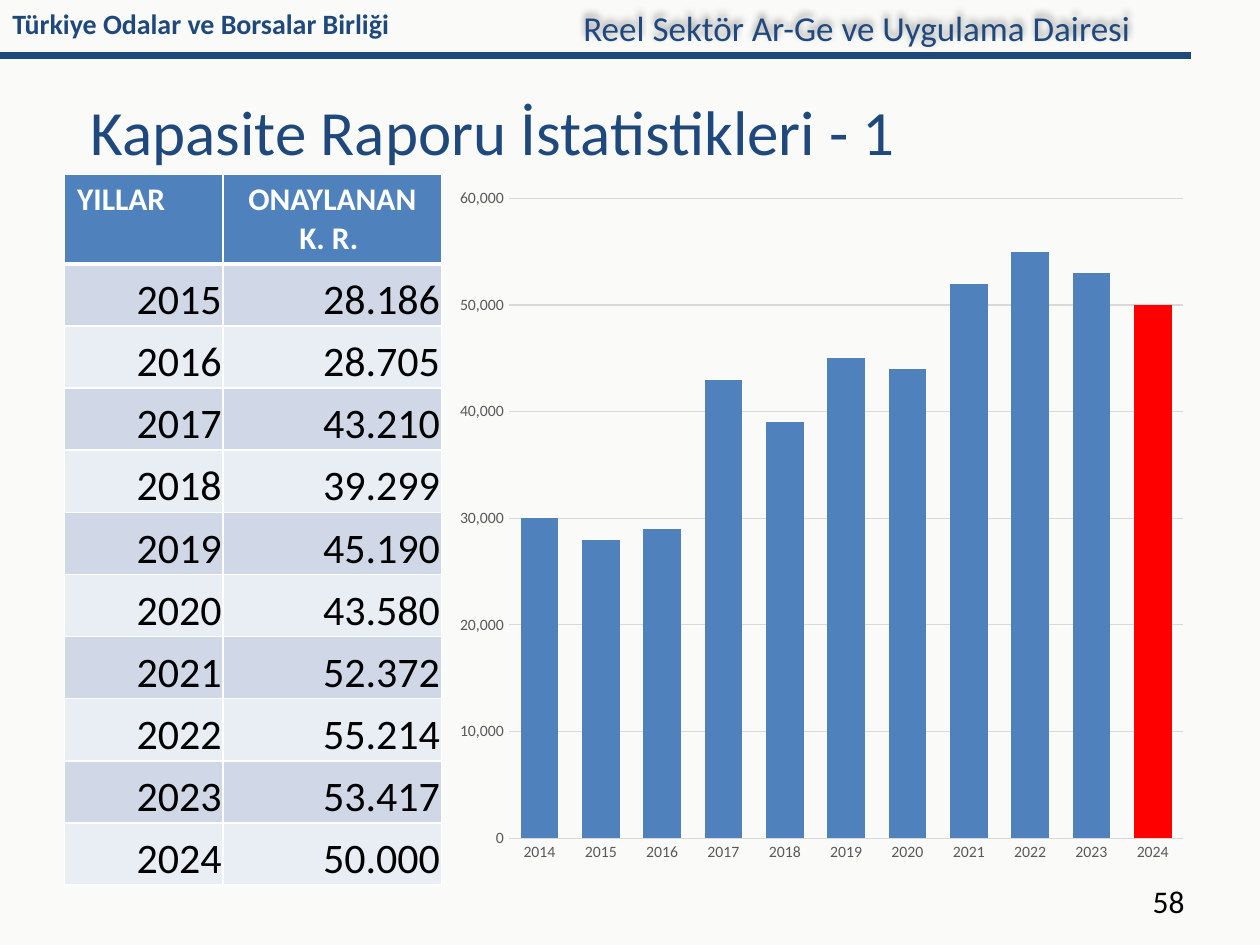
from dataclasses import dataclass
from lxml.etree import SubElement
from pptx import Presentation
from pptx.chart.data import CategoryChartData
from pptx.dml.color import RGBColor
from pptx.enum.chart import XL_CHART_TYPE, XL_TICK_MARK
from pptx.enum.shapes import MSO_CONNECTOR
from pptx.enum.text import MSO_ANCHOR, PP_ALIGN
from pptx.oxml.ns import qn
from pptx.shapes.autoshape import Shape
from pptx.slide import Slide
from pptx.table import _Cell
from pptx.text.text import Font, TextFrame
from pptx.util import Cm, Pt

COLORS = {
    "background": "FAFAF9",
    "navy": "1F497D",
    "blue": "4F81BD",
    "red": "FF0000",
    "black": "000000",
    "white": "FFFFFF",
    "odd_row": "D0D8E8",
    "even_row": "E9EDF4",
    "axis_text": "595959",
    "grid": "D9D9D9",
}
FONT = "Calibri"


@dataclass(frozen=True)
class Style:
    size: float
    color: str
    bold: bool = False
    align: PP_ALIGN = PP_ALIGN.LEFT


@dataclass(frozen=True)
class Label:
    text: str
    left: float
    top: float
    width: float
    height: float
    style: Style
    inset: float = 0.25
    anchor: MSO_ANCHOR = MSO_ANCHOR.TOP


@dataclass(frozen=True)
class YearCount:
    year: str
    approved: int


ORGANIZATION = Label("Türkiye Odalar ve Borsalar Birliği", 0, 0, 20.7, 0.94,
                     Style(16, "navy", True))
TITLE = Label("Kapasite Raporu İstatistikleri - 1", 1.3, 1.73, 22.86, 1.8,
              Style(36, "navy"), 0.53, MSO_ANCHOR.MIDDLE)
PAGE_NUMBER = Label("58", 18.21, 17.65, 5.92, 1.02,
                    Style(18, "black", align=PP_ALIGN.RIGHT))
DEPARTMENT = Label("Reel Sektör Ar-Ge ve Uygulama Dairesi", 11.51, 0, 15.7, 1.12,
                   Style(20, "navy"))

REPORTS = [
    YearCount("2014", 30000),
    YearCount("2015", 28186),
    YearCount("2016", 28705),
    YearCount("2017", 43210),
    YearCount("2018", 39299),
    YearCount("2019", 45190),
    YearCount("2020", 43580),
    YearCount("2021", 52372),
    YearCount("2022", 55214),
    YearCount("2023", 53417),
    YearCount("2024", 50000),
]


def rgb(name: str) -> RGBColor:
    return RGBColor.from_string(COLORS[name])


def style_font(font: Font, style: Style) -> None:
    font.name = FONT
    font.size = Pt(style.size)
    font.bold = style.bold
    font.color.rgb = rgb(style.color)


def write_lines(frame: TextFrame, lines: list[str], style: Style) -> None:
    for index, line in enumerate(lines):
        paragraph = frame.add_paragraph() if index else frame.paragraphs[0]
        paragraph.alignment = style.align
        run = paragraph.add_run()
        run.text = line
        style_font(run.font, style)


def add_label(slide: Slide, label: Label) -> Shape:
    box = slide.shapes.add_textbox(Cm(label.left), Cm(label.top),
                                   Cm(label.width), Cm(label.height))
    frame = box.text_frame
    frame.word_wrap = True
    frame.margin_left = Cm(label.inset)
    frame.vertical_anchor = label.anchor
    write_lines(frame, [label.text], label.style)
    return box


def add_soft_shadow(box: Shape) -> None:
    effects = SubElement(box.element.spPr, qn("a:effectLst"))
    shadow = SubElement(effects, qn("a:outerShdw"), blurRad="50800",
                        dist="38100", dir="16200000", rotWithShape="0")
    color = SubElement(shadow, qn("a:prstClr"), val="black")
    SubElement(color, qn("a:alpha"), val="40000")


def add_header_rule(slide: Slide) -> None:
    rule = slide.shapes.add_connector(MSO_CONNECTOR.STRAIGHT,
                                      Cm(0), Cm(1.12), Cm(24), Cm(1.12))
    rule.line.color.rgb = rgb("navy")
    rule.line.width = Pt(4)
    SubElement(rule.element.spPr, qn("a:effectLst"))


def set_borders(cell: _Cell, top: float, bottom: float) -> None:
    properties = cell._tc.get_or_add_tcPr()
    for side, width in {"lnL": 1, "lnR": 1, "lnT": top, "lnB": bottom}.items():
        line = SubElement(properties, qn(f"a:{side}"), w=str(Pt(width)))
        fill = SubElement(line, qn("a:solidFill"))
        SubElement(fill, qn("a:srgbClr"), val=COLORS["white"])


def fill_cell(cell: _Cell, lines: list[str], style: Style, fill: str,
              top: float = 1, bottom: float = 1) -> None:
    set_borders(cell, top, bottom)
    cell.fill.solid()
    cell.fill.fore_color.rgb = rgb(fill)
    write_lines(cell.text_frame, lines, style)


def add_report_table(slide: Slide, reports: list[YearCount]) -> None:
    table_height, header_height = 14.33, 1.8
    row_height = (table_height - header_height) / len(reports)
    table = slide.shapes.add_table(len(reports) + 1, 2, Cm(1.3), Cm(3.52),
                                   Cm(7.6), Cm(table_height)).table
    for column, width in zip(table.columns, (3.2, 4.4)):
        column.width = Cm(width)
    table.rows[0].height = Cm(header_height)

    headings = [(["YILLAR"], PP_ALIGN.LEFT), (["ONAYLANAN", "K. R. "], PP_ALIGN.CENTER)]
    for column, (lines, align) in enumerate(headings):
        fill_cell(table.cell(0, column), lines, Style(18, "white", True, align),
                  "blue", bottom=3)

    body = Style(24, "black", align=PP_ALIGN.RIGHT)
    for row, report in enumerate(reports, start=1):
        table.rows[row].height = Cm(row_height)
        approved = f"{report.approved:,}".replace(",", ".")
        for column, value in enumerate((report.year, approved)):
            cell = table.cell(row, column)
            cell.vertical_anchor = MSO_ANCHOR.BOTTOM
            cell.margin_left = cell.margin_right = cell.margin_top = Cm(0.03)
            cell.margin_bottom = Cm(0)
            fill_cell(cell, [value], body, "odd_row" if row % 2 else "even_row",
                      top=3 if row == 1 else 1)


def add_report_chart(slide: Slide, reports: list[YearCount]) -> None:
    data = CategoryChartData(number_format="#,##0")
    data.categories = [report.year for report in reports]
    data.add_series("Series 1", [round(report.approved, -3) for report in reports])
    chart = slide.shapes.add_chart(XL_CHART_TYPE.COLUMN_CLUSTERED, Cm(8.97), Cm(3.53),
                                   Cm(15.19), Cm(14.12), data).chart
    chart.has_legend = False
    chart.has_title = False
    style_font(chart.font, Style(10, "black"))

    plot = chart.plots[0]
    plot.vary_by_categories = False
    plot.gap_width = 63
    plot.overlap = -27
    approved = plot.series[0]
    approved.invert_if_negative = False
    latest_year = approved.points[len(reports) - 1]
    for bar, color in ((approved, "blue"), (latest_year, "red")):
        bar.format.fill.solid()
        bar.format.fill.fore_color.rgb = rgb(color)

    years, counts = chart.category_axis, chart.value_axis
    for axis in (years, counts):
        axis.major_tick_mark = XL_TICK_MARK.NONE
        axis.minor_tick_mark = XL_TICK_MARK.NONE
        style_font(axis.tick_labels.font, Style(9, "axis_text"))
    counts.minimum_scale = 0
    counts.maximum_scale = 60000
    counts.major_unit = 10000
    counts.tick_labels.number_format = "#,##0"
    counts.tick_labels.number_format_is_linked = False
    counts.format.line.fill.background()
    for line in (years.format.line, counts.major_gridlines.format.line):
        line.color.rgb = rgb("grid")
        line.width = Pt(0.75)


def main() -> None:
    presentation = Presentation()
    presentation.slide_width = Cm(25.4)
    presentation.slide_height = Cm(19.05)
    slide = presentation.slides.add_slide(presentation.slide_layouts[6])
    slide.background.fill.solid()
    slide.background.fill.fore_color.rgb = rgb("background")

    add_header_rule(slide)
    for label in (ORGANIZATION, TITLE, PAGE_NUMBER):
        add_label(slide, label)
    add_soft_shadow(add_label(slide, DEPARTMENT))
    add_report_table(slide, REPORTS[1:])
    add_report_chart(slide, REPORTS)
    presentation.save("out.pptx")


if __name__ == "__main__":
    main()
